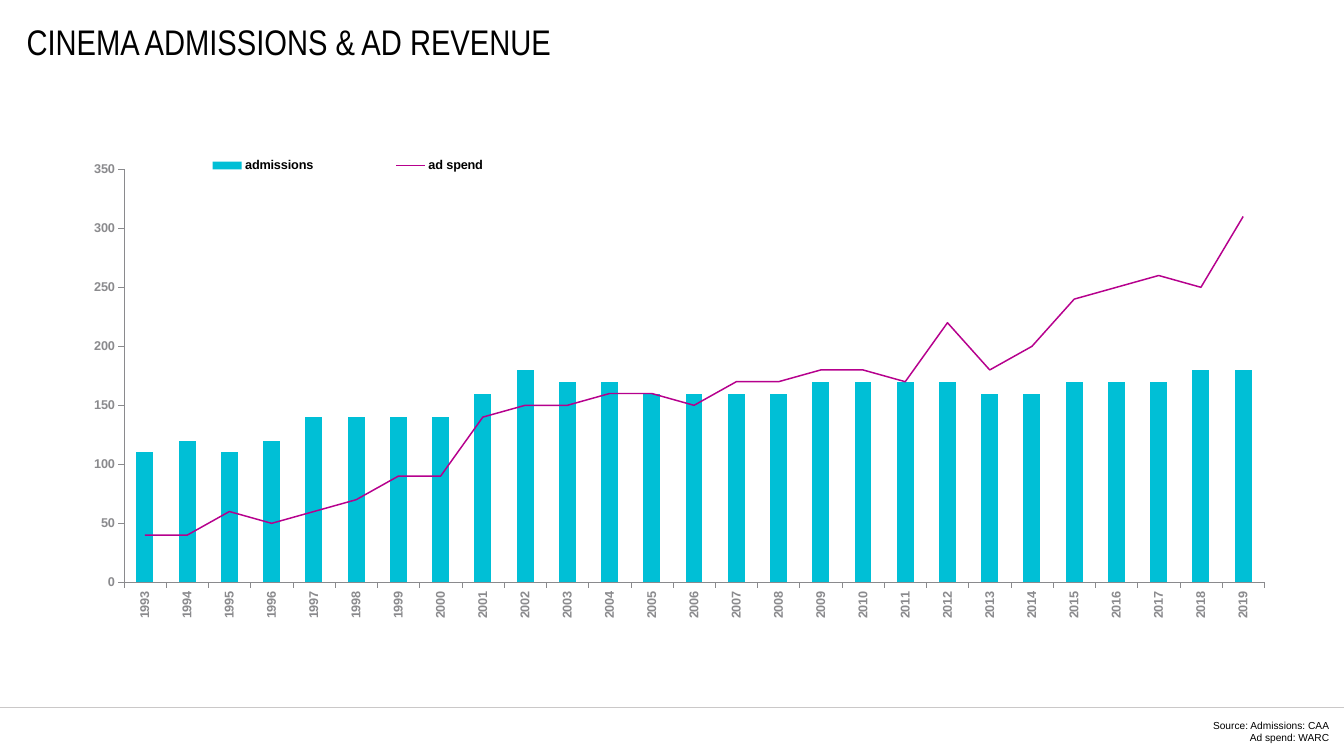
from pptx import Presentation
from pptx.chart.data import CategoryChartData
from pptx.dml.color import RGBColor
from pptx.enum.chart import XL_CHART_TYPE, XL_LEGEND_POSITION, XL_TICK_MARK
from pptx.enum.shapes import MSO_CONNECTOR
from pptx.enum.text import MSO_ANCHOR, PP_ALIGN
from pptx.oxml import parse_xml
from pptx.oxml.ns import nsdecls, qn
from pptx.util import Inches, Pt
from lxml import etree

# Content
TITLE = "CINEMA ADMISSIONS & AD REVENUE"
SOURCES = ["Source: Admissions: CAA", "Ad spend: WARC"]
YEARS = [str(year) for year in range(1993, 2020)]
ADMISSIONS = [110, 120, 110, 120, 140, 140, 140, 140, 160, 180, 170, 170, 160, 160,
              160, 160, 170, 170, 170, 170, 160, 160, 170, 170, 170, 180, 180]
AD_SPEND = [40, 40, 60, 50, 60, 70, 90, 90, 140, 150, 150, 160, 160, 150,
            170, 170, 180, 180, 170, 220, 180, 200, 240, 250, 260, 250, 310]

# Fractions of the chart: x, y, width, height
PLOT_AREA = (0.082, 0.059, 0.886, 0.757)
LEGEND_AREA = (0.09, 0.032, 0.332, 0.04)

BLACK = RGBColor(0x00, 0x00, 0x00)
GREY = RGBColor(0x8A, 0x8A, 0x8D)
RULE_GREY = RGBColor(0xCA, 0xC8, 0xC8)
CYAN = RGBColor(0x00, 0xBF, 0xD6)
MAGENTA = RGBColor(0xB6, 0x00, 0x8D)


def set_font(font, size, color, name="Arial", bold=False):
    font.size, font.name, font.bold = Pt(size), name, bold
    font.color.rgb = color


def set_frame(tf, wrap):
    tf.margin_left = tf.margin_right = tf.margin_top = tf.margin_bottom = 0
    tf.vertical_anchor = MSO_ANCHOR.MIDDLE
    tf.word_wrap = wrap


def place(s, left, top, width, height):
    s.left, s.top = Inches(left), Inches(top)
    s.width, s.height = Inches(width), Inches(height)


def manual_layout(area, inner=False):
    target = '<c:layoutTarget val="inner"/>' if inner else ""
    modes = '<c:xMode val="edge"/><c:yMode val="edge"/>'
    sizes = "".join(f'<c:{k} val="{v}"/>' for k, v in zip("xywh", area))
    return parse_xml(f'<c:layout {nsdecls("c")}><c:manualLayout>{target}{modes}{sizes}'
                     '</c:manualLayout></c:layout>')


def set_layout(parent, index, layout):
    for old in parent.findall(qn("c:layout")):
        parent.remove(old)
    parent.insert(index, layout)


def move_to_line(plot_area):
    """Move the second bar series to a line chart on the same axes."""
    bars = plot_area.find(qn("c:barChart"))
    ser = bars.findall(qn("c:ser"))[1]
    for invert in ser.findall(qn("c:invertIfNegative")):
        ser.remove(invert)
    lines = parse_xml(f'<c:lineChart {nsdecls("c")}><c:grouping val="standard"/>'
                      '<c:varyColors val="0"/><c:marker val="1"/></c:lineChart>')
    lines.insert(2, ser)
    for axis in bars.findall(qn("c:axId")):
        etree.SubElement(lines, qn("c:axId")).set("val", axis.get("val"))
    bars.addnext(lines)
    marker = parse_xml(f'<c:marker {nsdecls("c")}><c:symbol val="none"/></c:marker>')
    ser.find(qn("c:cat")).addprevious(marker)


prs = Presentation()
prs.slide_width, prs.slide_height = Inches(14.7), Inches(8.27)
slide = prs.slides.add_slide(prs.slide_layouts[5])

# Title
title = slide.shapes.title
place(title, 0.29, 0.3, 13.58, 0.31)
set_frame(title.text_frame, False)
p = title.text_frame.paragraphs[0]
p.alignment = PP_ALIGN.LEFT
r = p.add_run()
r.text = TITLE
set_font(r.font, 28, BLACK, "Arial Narrow")

# Footer rule
rule_y = Inches(7.74)
rule = slide.shapes.add_connector(MSO_CONNECTOR.STRAIGHT, 0, rule_y, prs.slide_width, rule_y)
rule.line.color.rgb = RULE_GREY
rule.line.width = Pt(0.5)
etree.SubElement(rule._element.spPr, qn("a:effectLst"))

# Source
source = slide.shapes.add_textbox(Inches(11.13), Inches(7.87), Inches(3.41), Inches(0.27))
tf = source.text_frame
set_frame(tf, True)
for i, line in enumerate(SOURCES):
    p = tf.add_paragraph() if i else tf.paragraphs[0]
    p.alignment = PP_ALIGN.RIGHT
    r = p.add_run()
    r.text = line
    set_font(r.font, 8, BLACK)

# Chart
data = CategoryChartData(number_format="General")
data.categories = YEARS
data.add_series("admissions", ADMISSIONS)
data.add_series("ad spend", AD_SPEND)
chart = slide.shapes.add_chart(XL_CHART_TYPE.COLUMN_CLUSTERED, Inches(0.2), Inches(1.5),
                               Inches(14.08), Inches(5.97), data).chart
chart.has_title = False
set_font(chart.font, 9.4, CYAN, "Calibri", True)
chart.plots[0].gap_width = 150
chart.plots[0].vary_by_categories = False

plot_area = chart._chartSpace.chart.plotArea
set_layout(plot_area, 0, manual_layout(PLOT_AREA, inner=True))
move_to_line(plot_area)

bar_fill = chart.plots[0].series[0].format.fill
bar_fill.solid()
bar_fill.fore_color.rgb = CYAN
spend = chart.plots[1].series[0]
spend.smooth = False
spend.format.line.color.rgb = MAGENTA
spend.format.line.width = Pt(1.17)

# Axes
for axis in (chart.category_axis, chart.value_axis):
    axis.has_major_gridlines = False
    axis.major_tick_mark = XL_TICK_MARK.OUTSIDE
    axis.format.line.color.rgb = GREY
    axis.format.line.width = Pt(0.29)
    set_font(axis.tick_labels.font, 10, GREY, bold=True)
chart.value_axis.minimum_scale = 0
chart.value_axis.maximum_scale = 350
chart.value_axis.major_unit = 50
labels = chart.category_axis._element.find(qn("c:txPr")).find(qn("a:bodyPr"))
labels.set("rot", "-5400000")
labels.set("vert", "horz")

# Legend
chart.has_legend = True
legend = chart.legend
legend.position = XL_LEGEND_POSITION.RIGHT
legend.include_in_layout = False
set_font(legend.font, 10, BLACK, bold=True)
set_layout(legend._element, 1, manual_layout(LEGEND_AREA))

prs.save("out.pptx")
